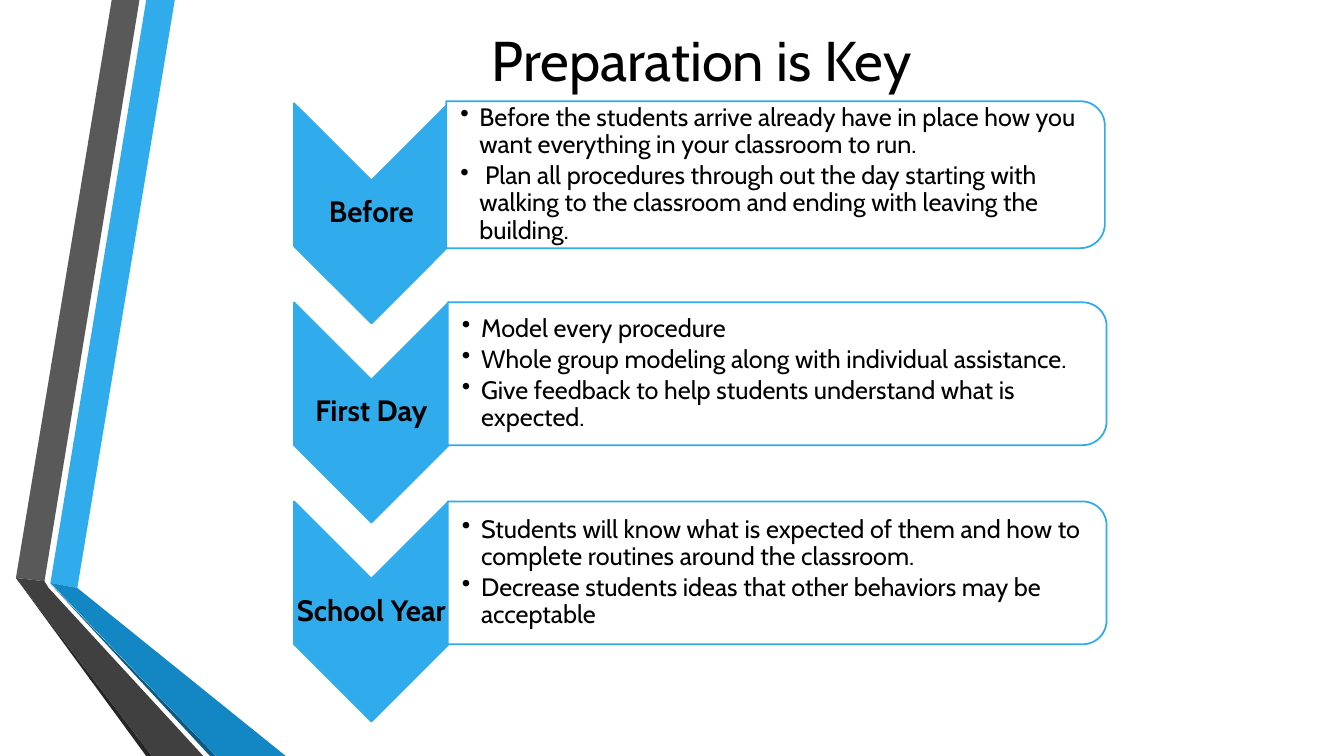
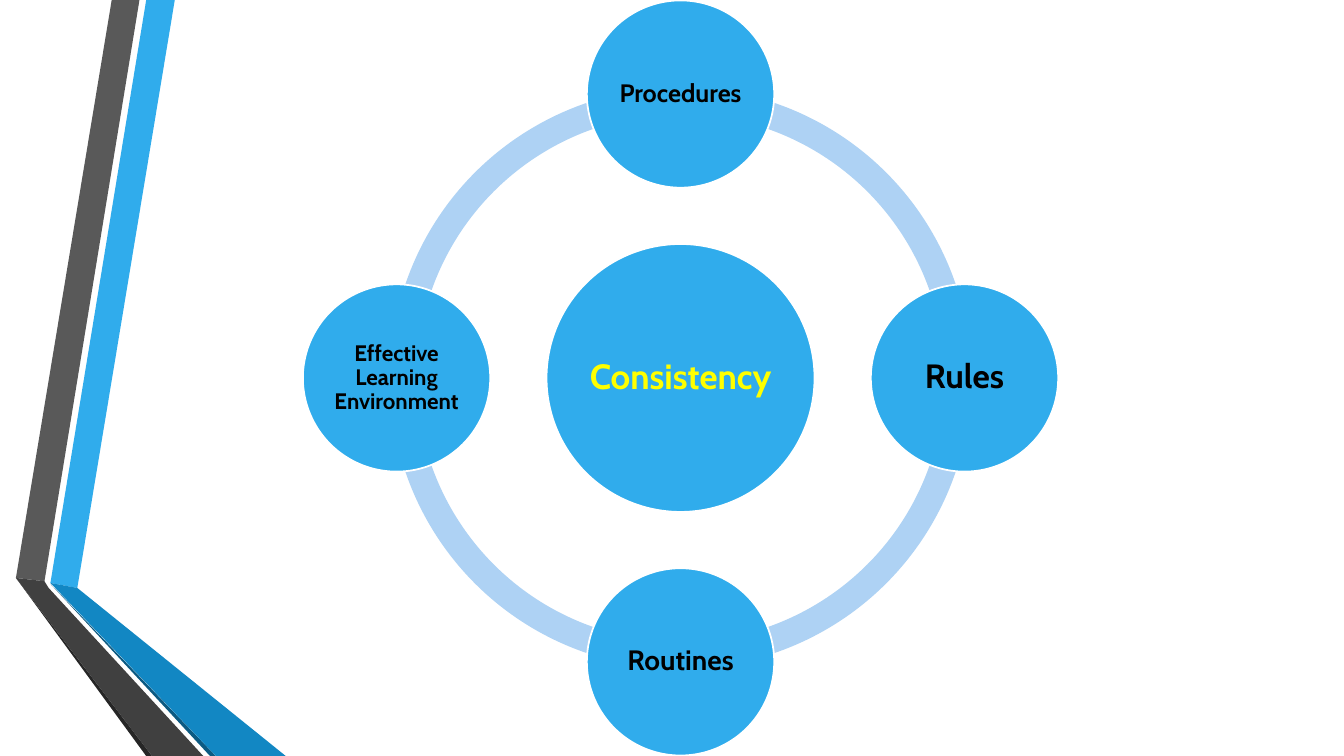
from dataclasses import dataclass
from lxml import etree
from pptx import Presentation
from pptx.dml.color import RGBColor
from pptx.enum.shapes import MSO_SHAPE
from pptx.enum.text import MSO_ANCHOR, PP_ALIGN
from pptx.oxml.ns import qn
from pptx.util import Emu, Inches, Pt

CHEVRON, PANEL = MSO_SHAPE.CHEVRON, MSO_SHAPE.ROUND_2_SAME_RECTANGLE
ARC, OVAL = MSO_SHAPE.BLOCK_ARC, MSO_SHAPE.OVAL
MIDDLE, CENTER, LEFT = MSO_ANCHOR.MIDDLE, PP_ALIGN.CENTER, PP_ALIGN.LEFT

# Square grid: 16 columns by 9 rows
SLIDE_W, SLIDE_H = Inches(13.33), Inches(7.5)
ROWS = 9
CELL = SLIDE_H / ROWS


@dataclass(frozen=True)
class Theme:
    font: str = "Cabin"
    blue: str = "30ACEC"
    blue_dark: str = "1287C3"
    blue_deep: str = "0C5A82"
    blue_pale: str = "AED2F4"
    gray: str = "595959"
    gray_dark: str = "404040"
    gray_deep: str = "262626"
    white: str = "FFFFFF"
    black: str = "000000"
    yellow: str = "FFFF00"
    title: float = 40
    label: float = 21
    body: float = 18
    hub: float = 25
    line: float = 1.25


T = Theme()


@dataclass(frozen=True)
class Band:
    color: str
    points: tuple[tuple[float, float], ...]


@dataclass(frozen=True)
class Step:
    label: str
    bullets: tuple[str, ...]
    panel_x: float = 9.25
    panel_h: float = 1.7


@dataclass(frozen=True)
class Node:
    label: str
    size: float
    dx: int
    dy: int


BANDS = (
    Band(T.blue, ((0.6, 6.94), (0.92, 7), (2.08, 0), (1.74, 0))),
    Band(T.gray, ((1.66, 0), (1.33, 0), (0.19, 6.88), (0.53, 6.92))),
    Band(T.gray_deep, ((0.19, 6.88), (1.74, 9), (1.81, 9))),
    Band(T.blue_deep, ((0.6, 6.95), (2.5, 9), (2.57, 9))),
    Band(T.blue_dark, ((0.6, 6.94), (2.57, 9), (3.4, 9), (0.92, 7))),
    Band(T.gray_dark, ((2.42, 9), (0.58, 7), (0.53, 6.92), (0.19, 6.88), (1.81, 9))),
)

STEPS = (
    Step("Before", (
        "Before the students arrive already have in place how you want everything "
        "in your classroom to run.",
        " Plan all procedures through out the day starting with walking to the "
        "classroom and ending with leaving the building.",
    ), panel_x=9.23, panel_h=1.75),
    Step("First Day", (
        "Model every procedure",
        "Whole group modeling along with individual assistance.",
        "Give feedback to help students understand what is expected.",
    )),
    Step("School Year", (
        "Students will know what is expected of them and how to complete routines "
        "around the classroom.",
        "Decrease students ideas that other behaviors may be acceptable",
    )),
)

NODES = (
    Node("Procedures", 18, 0, -1),
    Node("Rules", 24, 1, 0),
    Node("Routines", 20, 0, 1),
    Node("Effective Learning Environment", 16, -1, 0),
)


def cells(n: float) -> Emu:
    return Emu(round(n * CELL))


def paint(sp, fill: str, line: str | None = None) -> None:
    sp.shadow.inherit = False
    sp.fill.solid()
    sp.fill.fore_color.rgb = RGBColor.from_string(fill)
    if line:
        sp.line.color.rgb = RGBColor.from_string(line)
        sp.line.width = Pt(T.line)
    else:
        sp.line.fill.background()


def add_bullet(p, indent: Emu) -> None:
    pPr = p._p.get_or_add_pPr()
    pPr.set("marL", str(indent))
    pPr.set("indent", str(-indent))
    etree.SubElement(pPr, qn("a:buChar")).set("char", "•")


def put_text(sp, *lines: str, size: float, color: str = T.black, bold: bool = False,
             align=CENTER, bullets: bool = False, spacing: float = 0.9,
             left: float = 0.01, inset: float = 0.01) -> None:
    tf = sp.text_frame
    tf.word_wrap = True
    tf.vertical_anchor = MIDDLE
    tf.margin_left = Inches(left)
    tf.margin_right = tf.margin_top = tf.margin_bottom = Inches(inset)
    for i, line in enumerate(lines):
        p = tf.paragraphs[0] if i == 0 else tf.add_paragraph()
        p.alignment = align
        p.line_spacing = spacing
        p.space_after = Pt(size * 0.15 if bullets else 0)
        if bullets:
            add_bullet(p, Inches(0.19))
        r = p.add_run()
        r.text = line
        r.font.name = T.font
        r.font.size = Pt(size)
        r.font.bold = bold
        r.font.color.rgb = RGBColor.from_string(color)


def add_box(s, x: float, y: float, w: float, h: float):
    return s.shapes.add_textbox(cells(x), cells(y), cells(w), cells(h))


def add_centered(s, kind, cx: float, cy: float, w: float, h: float, fill: str,
                 line: str | None = None, turned: bool = False):
    """Place a shape by its centre; a turned shape fills w by h after a quarter turn."""
    bw, bh = (h, w) if turned else (w, h)
    sp = s.shapes.add_shape(kind, cells(cx - bw / 2), cells(cy - bh / 2),
                            cells(bw), cells(bh))
    sp.rotation = 90 if turned else 0
    paint(sp, fill, line)
    return sp


def new_slide(prs):
    s = prs.slides.add_slide(prs.slide_layouts[6])
    for band in BANDS:
        start, *rest = [(cells(x), cells(y)) for x, y in band.points]
        outline = s.shapes.build_freeform(*start)
        outline.add_line_segments(rest, close=True)
        paint(outline.convert_to_shape(), band.color)
    return s


def draw_steps(s) -> None:
    chevron_x, chevron_w, chevron_h = 4.42, 1.84, 2.62
    panel_w, pitch = 7.84, 2.37
    for i, step in enumerate(STEPS):
        # Chevron and its label
        cy = 2.54 + i * pitch
        add_centered(s, CHEVRON, chevron_x, cy, chevron_w, chevron_h,
                     T.blue, T.blue, turned=True)
        label = add_box(s, chevron_x - chevron_w / 2, cy - 0.4, chevron_w, 0.8)
        put_text(label, step.label, size=T.label, bold=True)

        # Panel and its bullets
        cy = 2.08 + i * pitch
        add_centered(s, PANEL, step.panel_x, cy, panel_w, step.panel_h,
                     T.white, T.blue, turned=True)
        text_h = step.panel_h - 0.17
        body = add_box(s, step.panel_x - panel_w / 2, cy - text_h / 2, 7.75, text_h)
        put_text(body, *step.bullets, size=T.body, align=LEFT, bullets=True, left=0.14)


def draw_cycle(s) -> None:
    cx, cy = 8.1, ROWS / 2
    ring, hub, node_d, orbit = 6.92, 3.19, 2.23, 3.38

    # Ring in four quarters; python-pptx holds an angle as 0.6 per degree
    for start in (180, 90, 0, 270):
        arc = add_centered(s, ARC, cx, cy, ring, ring, T.blue_pale)
        arc.adjustments[0] = start * 0.6
        arc.adjustments[1] = (start + 90) % 360 * 0.6
        arc.adjustments[2] = 0.046

    # Hub and nodes
    sp = add_centered(s, OVAL, cx, cy, hub, hub, T.blue, T.white)
    put_text(sp, "Consistency", size=T.hub, color=T.yellow, bold=True)
    for node in NODES:
        sp = add_centered(s, OVAL, cx + node.dx * orbit, cy + node.dy * orbit,
                          node_d, node_d, T.blue, T.white)
        put_text(sp, node.label, size=node.size, bold=True, left=0.02, inset=0.02)


def main() -> None:
    prs = Presentation()
    prs.slide_width, prs.slide_height = SLIDE_W, SLIDE_H

    s = new_slide(prs)
    put_text(add_box(s, 3.29, 0, 10.12, 1.4), "Preparation is Key",
             size=T.title, spacing=1.0, left=0.1, inset=0.1)
    draw_steps(s)

    draw_cycle(new_slide(prs))
    prs.save("out.pptx")


if __name__ == "__main__":
    main()
